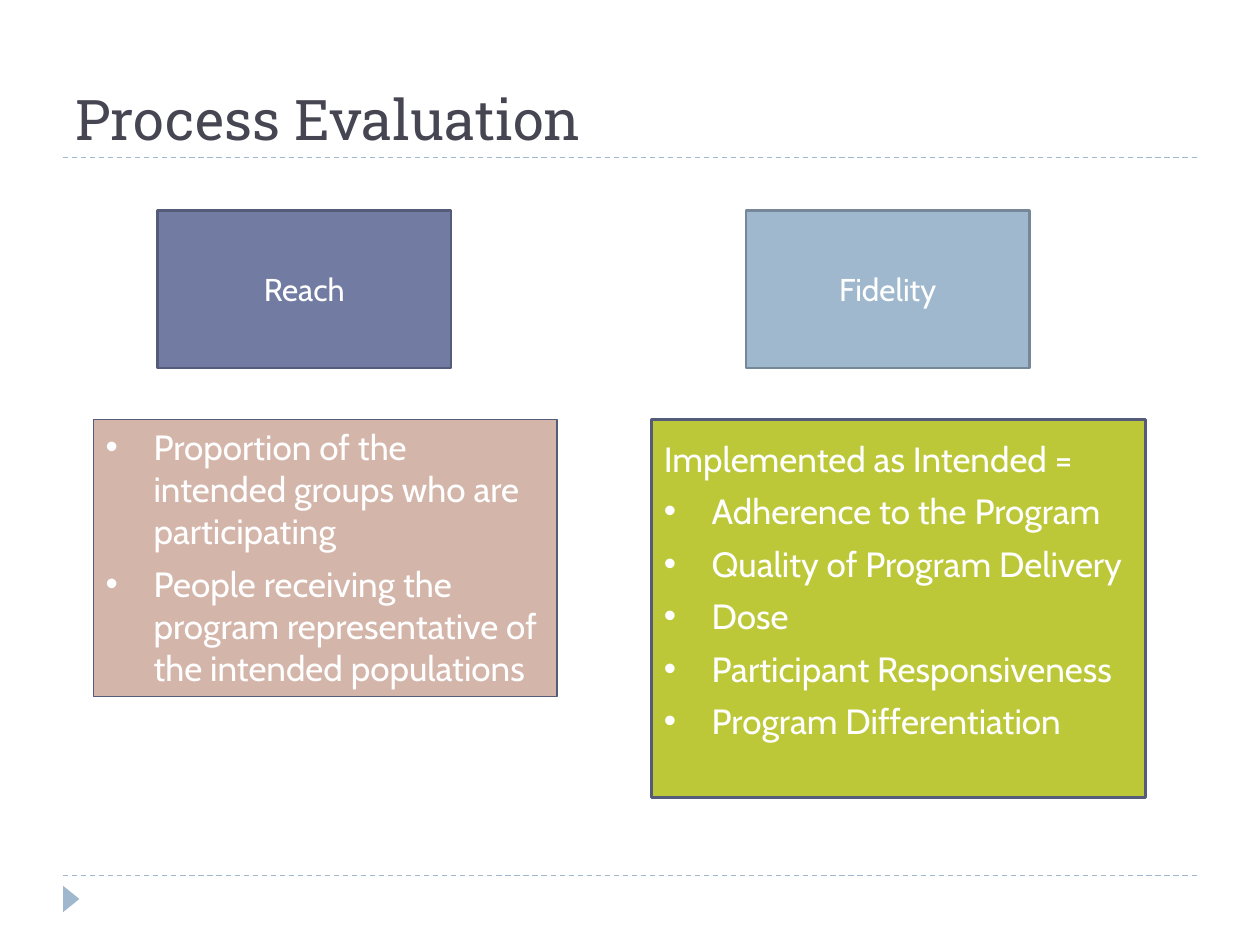
from lxml import etree
from pptx import Presentation
from pptx.dml.color import RGBColor
from pptx.enum.dml import MSO_LINE
from pptx.enum.shapes import MSO_CONNECTOR, MSO_SHAPE
from pptx.enum.text import MSO_ANCHOR as ANCHOR, PP_ALIGN as ALIGN
from pptx.oxml.ns import qn
from pptx.util import Inches, Pt

# Content
TITLE = "Process Evaluation"
HEADINGS = [  # text, left, width, fill, line
    ("Reach", 1.25, 2.33, "727CA3", "545C79"),
    ("Fidelity", 5.92, 2.25, "9FB8CD", "768898"),
]
REACH = [
    "Proportion of the intended groups who are participating",
    "People receiving the program representative of the intended populations",
]
FIDELITY_LEAD = "Implemented as Intended ="
FIDELITY = [
    "Adherence to the Program",
    "Quality of Program Delivery",
    "Dose",
    "Participant Responsiveness",
    "Program Differentiation",
]
RULES = [1.25, 6.95]
BLUE, SLATE, WHITE = "9FB8CD", "545C79", "FFFFFF"
INDENT = Inches(0.38)


def color(value):
    return RGBColor.from_string(value)


def add_text(tf, lines, size=20, font="Cabin", fill=WHITE, align=ALIGN.LEFT,
             anchor=ANCHOR.MIDDLE, after=0, bullets_from=None):
    tf.word_wrap = True
    tf.vertical_anchor = anchor
    for i, line in enumerate(lines):
        p = tf.paragraphs[0] if i == 0 else tf.add_paragraph()
        p.alignment = align
        p.space_after = Pt(after)
        if bullets_from is not None and i >= bullets_from:
            pPr = p._p.get_or_add_pPr()
            pPr.set("marL", str(INDENT))
            pPr.set("indent", str(-INDENT))
            etree.SubElement(pPr, qn("a:buFont")).set("typeface", "Arial")
            etree.SubElement(pPr, qn("a:buChar")).set("char", "•")
        r = p.add_run()
        r.text = line
        r.font.size = Pt(size)
        r.font.name = font
        r.font.color.rgb = color(fill)


def add_box(left, top, width, height, fill, line=None, weight=1.5,
            kind=MSO_SHAPE.RECTANGLE):
    sp = s.shapes.add_shape(kind, Inches(left), Inches(top), Inches(width), Inches(height))
    sp.shadow.inherit = False
    sp.fill.solid()
    sp.fill.fore_color.rgb = color(fill)
    if line:
        sp.line.color.rgb = color(line)
        sp.line.width = Pt(weight)
    else:
        sp.line.fill.background()
    return sp


prs = Presentation()
prs.slide_width, prs.slide_height = Inches(10), Inches(7.5)
s = prs.slides.add_slide(prs.slide_layouts[6])

# Dashed rules and corner marker
for y in RULES:
    rule = s.shapes.add_connector(MSO_CONNECTOR.STRAIGHT, Inches(0.5), Inches(y),
                                  Inches(9.5), Inches(y))
    rule.line.color.rgb = color(BLUE)
    rule.line.width = Pt(0.75)
    rule.line.dash_style = MSO_LINE.DASH
    etree.SubElement(rule._element.spPr, qn("a:effectLst"))
marker = add_box(0.46, 7.07, 0.21, 0.13, BLUE, kind=MSO_SHAPE.ISOSCELES_TRIANGLE)
marker.rotation = 90

# Title
title = s.shapes.add_textbox(Inches(0.5), Inches(0.17), Inches(9), Inches(1.08))
add_text(title.text_frame, [TITLE], size=32, font="Roboto Slab", fill="464653",
         anchor=ANCHOR.BOTTOM)

# Heading boxes
for text, left, width, fill, line in HEADINGS:
    sp = add_box(left, 1.67, width, 1.25, fill, line)
    add_text(sp.text_frame, [text], size=18, align=ALIGN.CENTER)

# Detail boxes
reach = add_box(0.74, 3.33, 3.68, 2.2, "D4B5AA", SLATE, weight=0.75)
add_text(reach.text_frame, REACH, anchor=ANCHOR.TOP, after=6, bullets_from=0)

fidelity = add_box(5.17, 3.33, 3.92, 3, "BCC838", SLATE)
fidelity.text_frame.margin_bottom = Inches(0.35)
add_text(fidelity.text_frame, [FIDELITY_LEAD] + FIDELITY, after=6, bullets_from=1)

prs.save("out.pptx")
